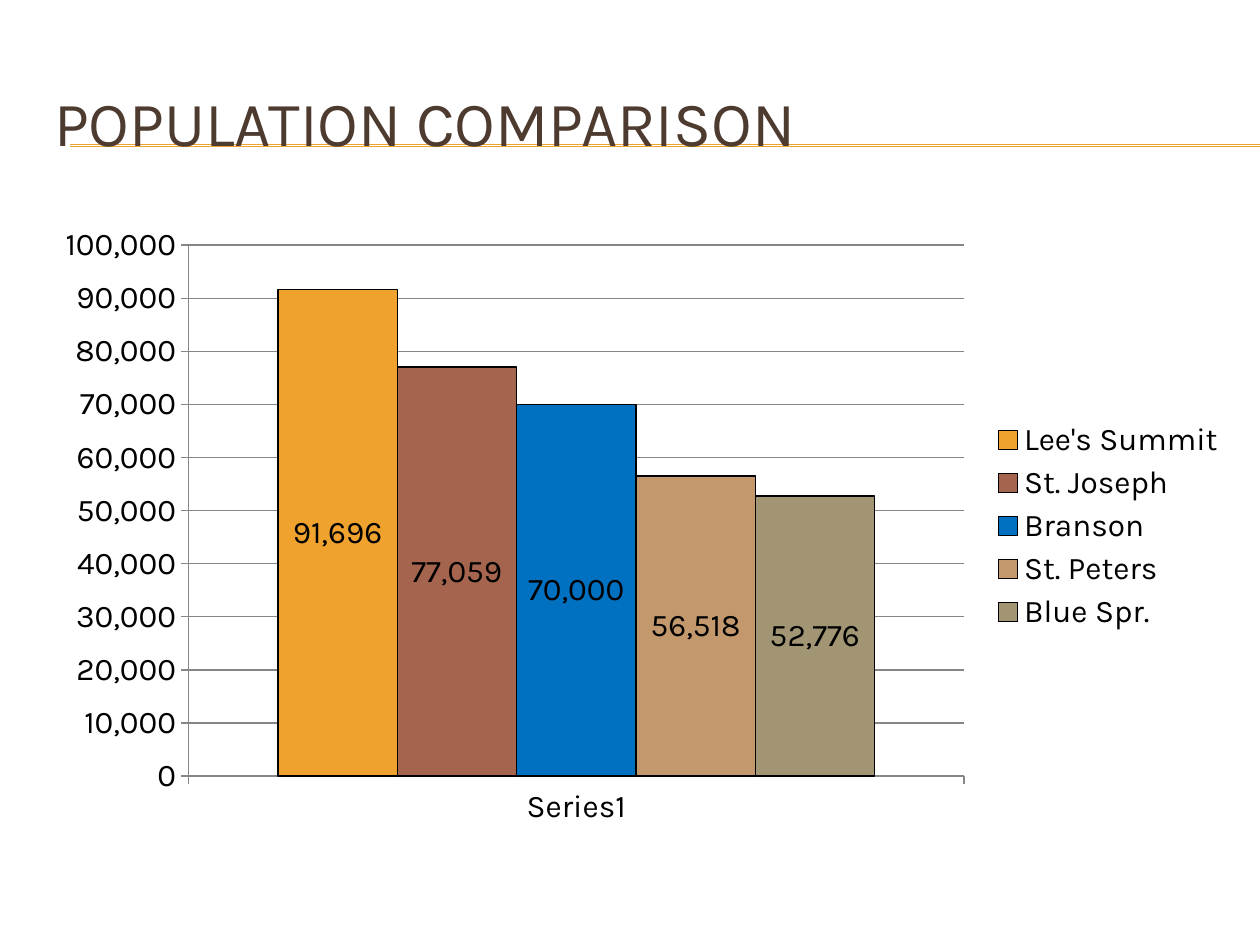
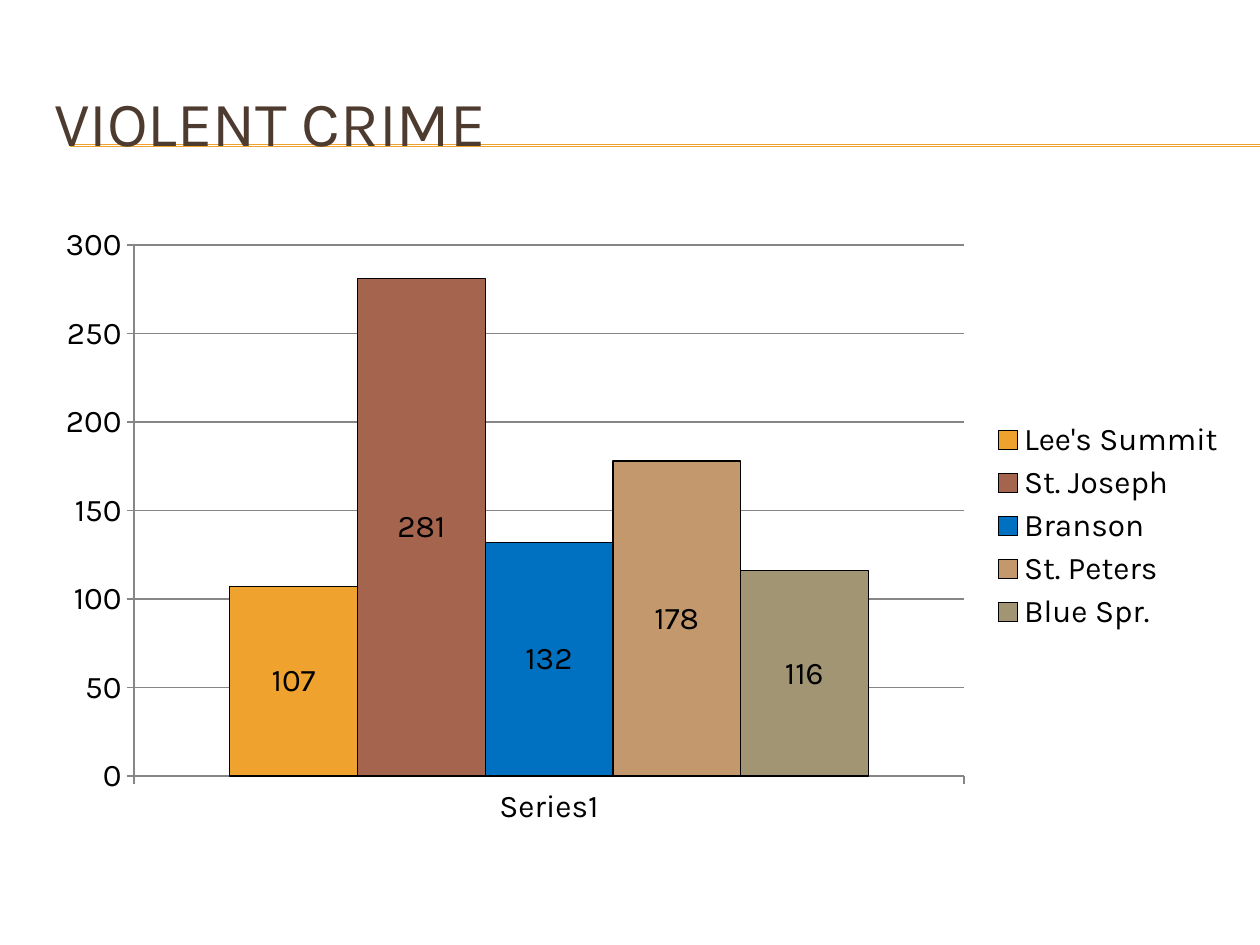
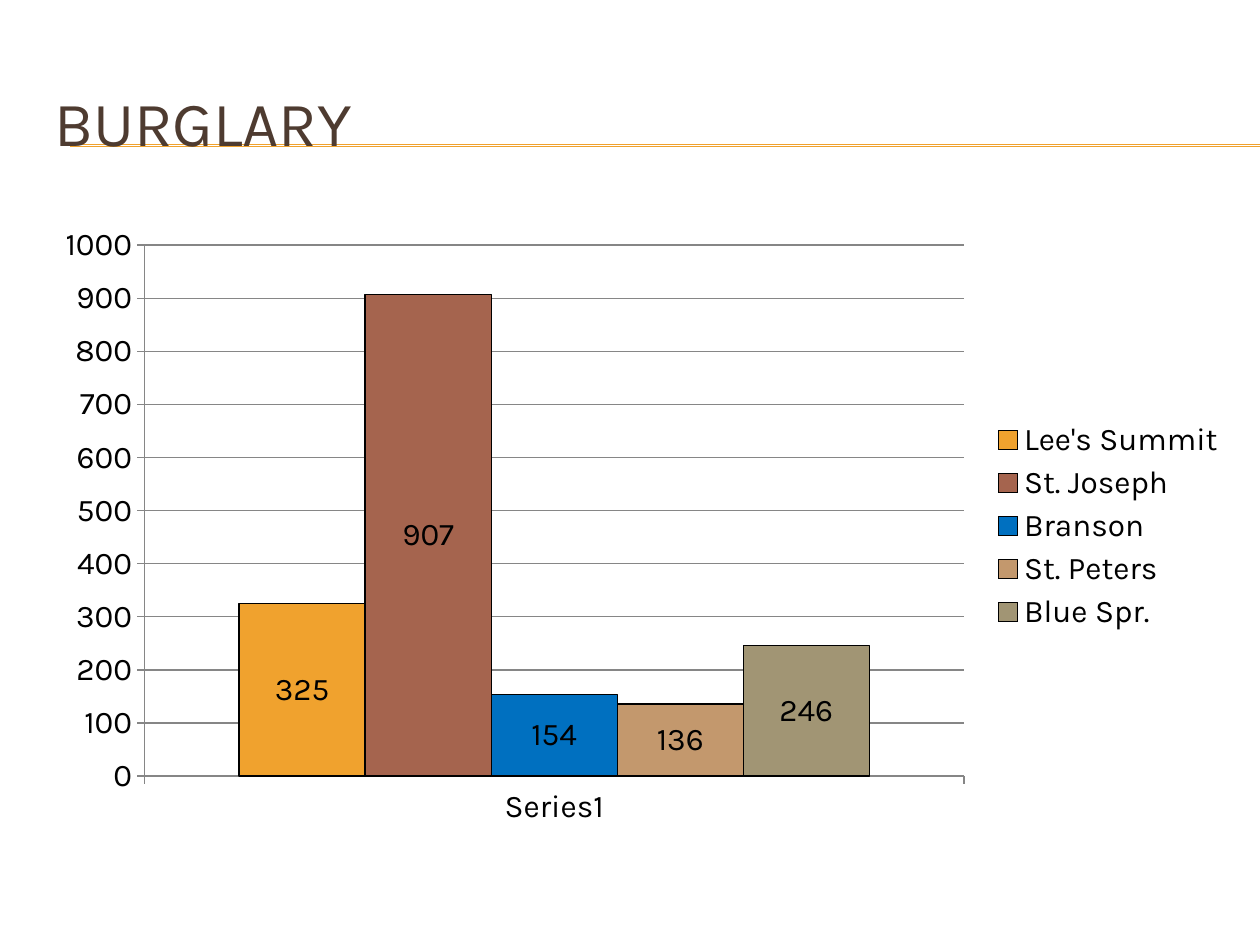
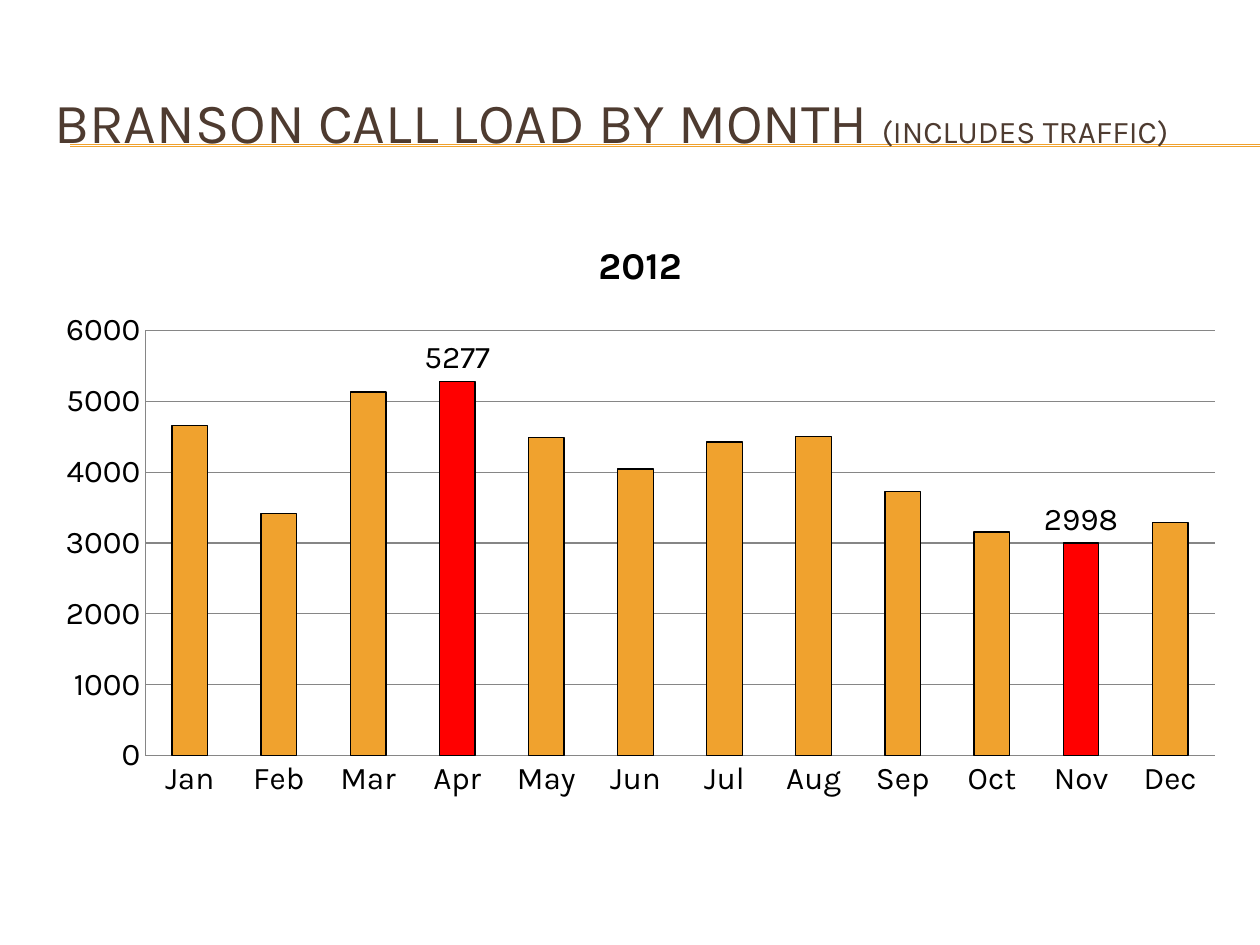
from collections import namedtuple
from dataclasses import dataclass

from lxml.etree import SubElement
from pptx import Presentation
from pptx.chart.data import CategoryChartData
from pptx.dml.color import RGBColor
from pptx.enum.chart import XL_CHART_TYPE, XL_LABEL_POSITION, XL_LEGEND_POSITION, XL_TICK_MARK
from pptx.enum.text import MSO_ANCHOR
from pptx.oxml.ns import qn
from pptx.util import Cm, Pt

Box = namedtuple("Box", "left top width height")


@dataclass(frozen=True)
class Theme:
    font: str = "Karla"
    title: RGBColor = RGBColor(0x4E, 0x3B, 0x30)
    accent: RGBColor = RGBColor(0xF0, 0xA2, 0x2E)
    highlight: RGBColor = RGBColor(0xFF, 0x00, 0x00)
    text: RGBColor = RGBColor(0x00, 0x00, 0x00)
    grid: RGBColor = RGBColor(0x86, 0x86, 0x86)
    title_size: Pt = Pt(36)
    long_title_size: Pt = Pt(32.4)
    body_size: Pt = Pt(18)
    chart_title_size: Pt = Pt(21.6)
    line_width: Pt = Pt(0.75)


THEME = Theme()
PAGE_WIDTH, PAGE_HEIGHT = Cm(25.4), Cm(19.05)
TITLE_BOX = Box(Cm(0.84), Cm(1.27), Cm(24.13), Cm(2.34))
CITY_BOX = Box(Cm(0.84), Cm(4.32), Cm(24.13), Cm(12.57))
MONTH_BOX = CITY_BOX._replace(height=Cm(11.99))

CITIES = {
    "Lee's Summit": THEME.accent,
    "St. Joseph": RGBColor(0xA5, 0x64, 0x4E),
    "Branson": RGBColor(0x00, 0x70, 0xC0),
    "St. Peters": RGBColor(0xC3, 0x98, 0x6D),
    "Blue Spr.": RGBColor(0xA1, 0x95, 0x74),
}
CITY_PAGES = [
    ("POPULATION COMPARISON", "#,##0", (91696, 77059, 70000, 56518, 52776)),
    ("VIOLENT CRIME", "General", (107, 281, 132, 178, 116)),
    ("BURGLARY", "General", (325, 907, 154, 136, 246)),
]
MONTHLY_CALLS = {
    "Jan": 4654, "Feb": 3411, "Mar": 5132, "Apr": 5277, "May": 4488, "Jun": 4046,
    "Jul": 4425, "Aug": 4501, "Sep": 3724, "Oct": 3156, "Nov": 2998, "Dec": 3290,
}


def add_title(page, box, spans):
    """Write the title from (text, size) spans over the double rule."""
    for offset in (Cm(1.65), Cm(1.68)):
        height = box.top + offset
        rule = page.shapes.add_connector(1, box.left + Cm(0.58), height, PAGE_WIDTH, height)
        rule.line.color.rgb = THEME.accent
        rule.line.width = THEME.line_width
        SubElement(rule._element.spPr, qn("a:effectLst"))

    frame = page.shapes.add_textbox(*box).text_frame
    frame.word_wrap = True
    frame.vertical_anchor = MSO_ANCHOR.MIDDLE
    para = frame.paragraphs[0]
    para.font.name = THEME.font
    para.font.color.rgb = THEME.title
    for text, size in spans:
        span = para.add_run()
        span.text = text
        span.font.size = size


def style_text(font, size=THEME.body_size):
    font.name = THEME.font
    font.size = size
    font.color.rgb = THEME.text


def style_bar(bar, color):
    bar.format.fill.solid()
    bar.format.fill.fore_color.rgb = color
    bar.format.line.color.rgb = THEME.text
    bar.format.line.width = THEME.line_width


def add_column_chart(page, box, data, tick):
    chart = page.shapes.add_chart(XL_CHART_TYPE.COLUMN_CLUSTERED, *box, data).chart
    style_text(chart.font)
    chart.has_title = False
    chart.has_legend = False
    plot = chart.plots[0]
    plot.gap_width = 150
    plot.overlap = 0
    plot.vary_by_categories = False
    values = chart.value_axis
    values.has_major_gridlines = True
    values.tick_labels.number_format = data.number_format
    values.tick_labels.number_format_is_linked = False
    for axis in (chart.category_axis, values):
        axis.major_tick_mark = tick
        axis.minor_tick_mark = XL_TICK_MARK.NONE
    for part in (chart.category_axis, values, values.major_gridlines):
        part.format.line.color.rgb = THEME.grid
        part.format.line.width = THEME.line_width
    return chart


def add_city_chart(page, box, number_format, values):
    data = CategoryChartData(number_format=number_format)
    data.categories = ["Series1"]
    for city, value in zip(CITIES, values):
        data.add_series(city, [value])
    chart = add_column_chart(page, box, data, XL_TICK_MARK.OUTSIDE)
    chart.has_legend = True
    chart.legend.position = XL_LEGEND_POSITION.RIGHT
    chart.legend.include_in_layout = False
    style_text(chart.legend.font)
    for series, color in zip(chart.plots[0].series, CITIES.values()):
        style_bar(series, color)
        labels = series.data_labels
        labels.show_value = True
        labels.position = XL_LABEL_POSITION.CENTER
        style_text(labels.font)


def add_month_chart(page, box, year, calls):
    """Chart calls by month, marking the busiest and the quietest."""
    data = CategoryChartData()
    data.categories = list(calls)
    data.add_series("Series 1", list(calls.values()))
    chart = add_column_chart(page, box, data, XL_TICK_MARK.NONE)
    chart.has_title = True
    heading = chart.chart_title.text_frame
    heading.text = year
    font = heading.paragraphs[0].font
    style_text(font, THEME.chart_title_size)
    font.bold = True

    series = chart.plots[0].series[0]
    style_bar(series, THEME.accent)
    series.data_labels.show_value = False
    months = list(calls)
    for month in (max(calls, key=calls.get), min(calls, key=calls.get)):
        point = series.points[months.index(month)]
        style_bar(point, THEME.highlight)
        point.data_label.position = XL_LABEL_POSITION.OUTSIDE_END
        style_text(point.data_label.font)


def add_page(deck, *title_spans):
    page = deck.slides.add_slide(deck.slide_layouts[6])
    add_title(page, TITLE_BOX, title_spans)
    return page


def main():
    deck = Presentation()
    deck.slide_width, deck.slide_height = PAGE_WIDTH, PAGE_HEIGHT
    for title, number_format, values in CITY_PAGES:
        page = add_page(deck, (title, THEME.title_size))
        add_city_chart(page, CITY_BOX, number_format, values)
    page = add_page(
        deck,
        ("BRANSON CALL LOAD BY MONTH ", THEME.long_title_size),
        ("(INCLUDES TRAFFIC)", THEME.body_size),
    )
    add_month_chart(page, MONTH_BOX, "2012", MONTHLY_CALLS)
    deck.save("out.pptx")


if __name__ == "__main__":
    main()
